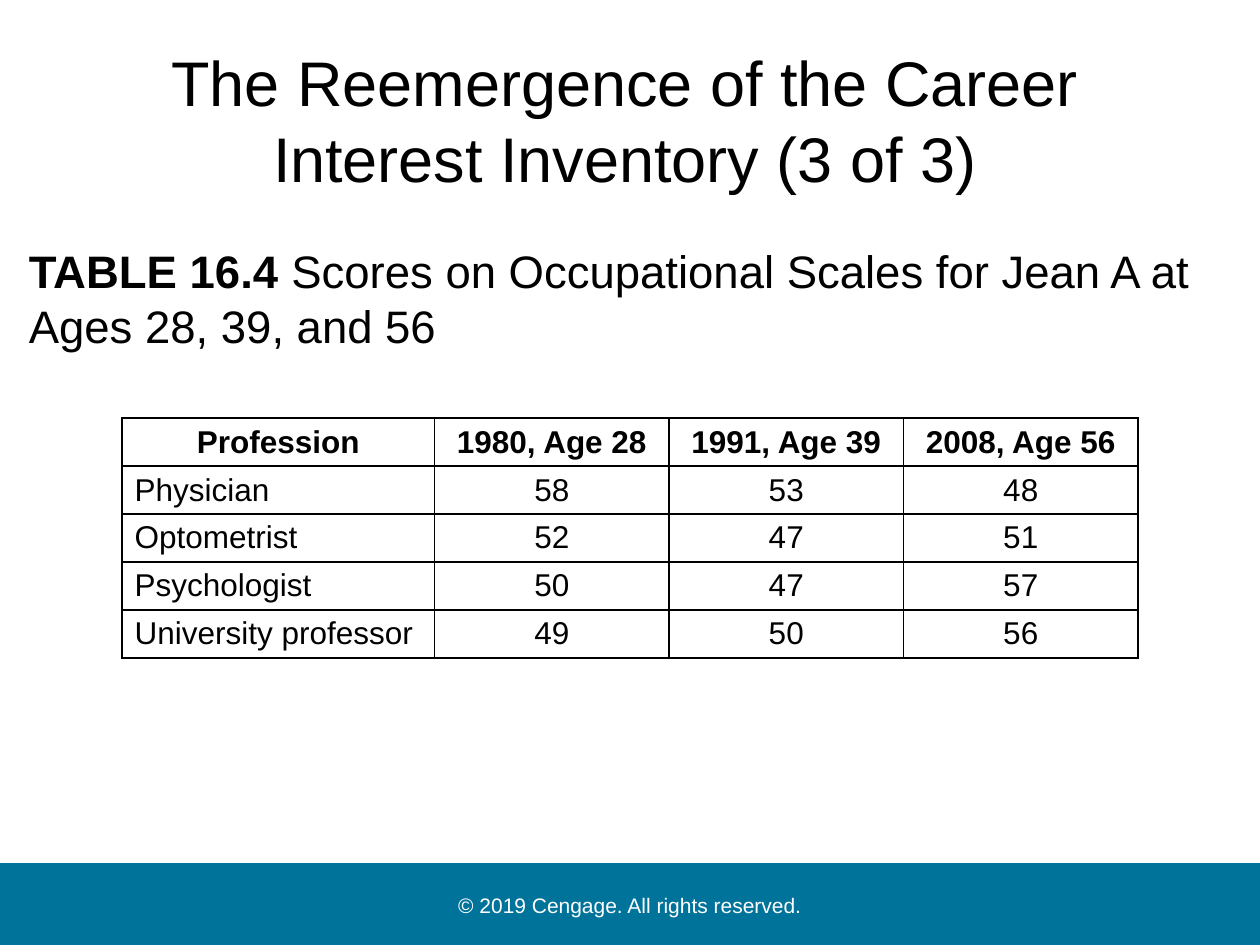
from dataclasses import dataclass

from lxml import etree
from pptx import Presentation
from pptx.dml.color import RGBColor
from pptx.enum.shapes import MSO_SHAPE
from pptx.enum.text import MSO_ANCHOR as Anchor, PP_ALIGN as Align
from pptx.oxml.ns import qn
from pptx.util import Pt

BLACK = RGBColor(0x00, 0x00, 0x00)
WHITE = RGBColor(0xFF, 0xFF, 0xFF)
TEAL = RGBColor(0x00, 0x73, 0x9B)
FONT = "Arial"

HEADINGS = ["Profession", "1980, Age 28", "1991, Age 39", "2008, Age 56"]
SCORES = [
    ("Physician", 58, 53, 48),
    ("Optometrist", 52, 47, 51),
    ("Psychologist", 50, 47, 57),
    ("University professor", 49, 50, 56),
]
COLUMN_WIDTHS = [178.5, 134, 134, 134]
ROW_HEIGHT = 27.4


@dataclass
class Run:
    text: str
    bold: bool = False


@dataclass
class TextBlock:
    left: float
    top: float
    width: float
    height: float
    runs: list[Run]
    size: float
    color: RGBColor = BLACK
    align: Align = Align.CENTER
    anchor: Anchor = Anchor.MIDDLE


BLOCKS = [
    TextBlock(136.8, 494.6, 446.4, 45.4,
              [Run("© 2019 Cengage. All rights reserved.")], 12, WHITE),
    TextBlock(41, 24.5, 632.2, 87.1,
              [Run("The Reemergence of the Career Interest Inventory (3 of 3)")], 36),
    TextBlock(9.4, 135.4, 695.5, 69.8,
              [Run("TABLE 16.4 ", bold=True),
               Run("Scores on Occupational Scales for Jean A at Ages 28, 39, and 56")],
              26, align=Align.LEFT, anchor=Anchor.TOP),
]


def write_runs(paragraph, runs: list[Run], size: float, color: RGBColor, align: Align) -> None:
    paragraph.alignment = align
    for part in runs:
        run = paragraph.add_run()
        run.text = part.text
        run.font.name = FONT
        run.font.size = Pt(size)
        run.font.bold = part.bold
        run.font.color.rgb = color


def add_text(slide, block: TextBlock) -> None:
    frame = slide.shapes.add_textbox(
        Pt(block.left), Pt(block.top), Pt(block.width), Pt(block.height)).text_frame
    frame.word_wrap = True
    frame.vertical_anchor = block.anchor
    write_runs(frame.paragraphs[0], block.runs, block.size, block.color, block.align)


def add_footer_band(slide) -> None:
    band = slide.shapes.add_shape(MSO_SHAPE.RECTANGLE, Pt(-0.5), Pt(493.2), Pt(721), Pt(49))
    band.shadow.inherit = False
    band.fill.solid()
    band.fill.fore_color.rgb = TEAL
    band.line.fill.background()


def outline_cell(cell) -> None:
    """Put a 1 pt black line on all four sides; borders must precede the fill."""
    properties = cell._tc.get_or_add_tcPr()
    for position, side in enumerate(("a:lnL", "a:lnR", "a:lnT", "a:lnB")):
        border = etree.Element(qn(side), w=str(Pt(1)))
        fill = etree.SubElement(border, qn("a:solidFill"))
        etree.SubElement(fill, qn("a:srgbClr"), val=str(BLACK))
        properties.insert(position, border)


def add_score_table(slide) -> None:
    rows = [HEADINGS, *SCORES]
    table = slide.shapes.add_table(
        len(rows), len(HEADINGS), Pt(69.8), Pt(239),
        Pt(sum(COLUMN_WIDTHS)), Pt(ROW_HEIGHT * len(rows))).table
    for column, width in zip(table.columns, COLUMN_WIDTHS):
        column.width = Pt(width)
    for row_index, values in enumerate(rows):
        table.rows[row_index].height = Pt(ROW_HEIGHT)
        is_heading = row_index == 0
        for column_index, value in enumerate(values):
            cell = table.cell(row_index, column_index)
            cell.margin_top, cell.margin_bottom = Pt(3.6), Pt(2)
            cell.fill.background()
            outline_cell(cell)
            align = Align.CENTER if is_heading or column_index else Align.LEFT
            write_runs(cell.text_frame.paragraphs[0], [Run(str(value), is_heading)],
                       18, BLACK, align)


def main() -> None:
    deck = Presentation()
    deck.slide_width, deck.slide_height = Pt(720), Pt(540)
    slide = deck.slides.add_slide(deck.slide_layouts[6])
    slide.background.fill.solid()
    slide.background.fill.fore_color.rgb = WHITE
    add_footer_band(slide)
    for block in BLOCKS:
        add_text(slide, block)
    add_score_table(slide)
    deck.save("out.pptx")


if __name__ == "__main__":
    main()
